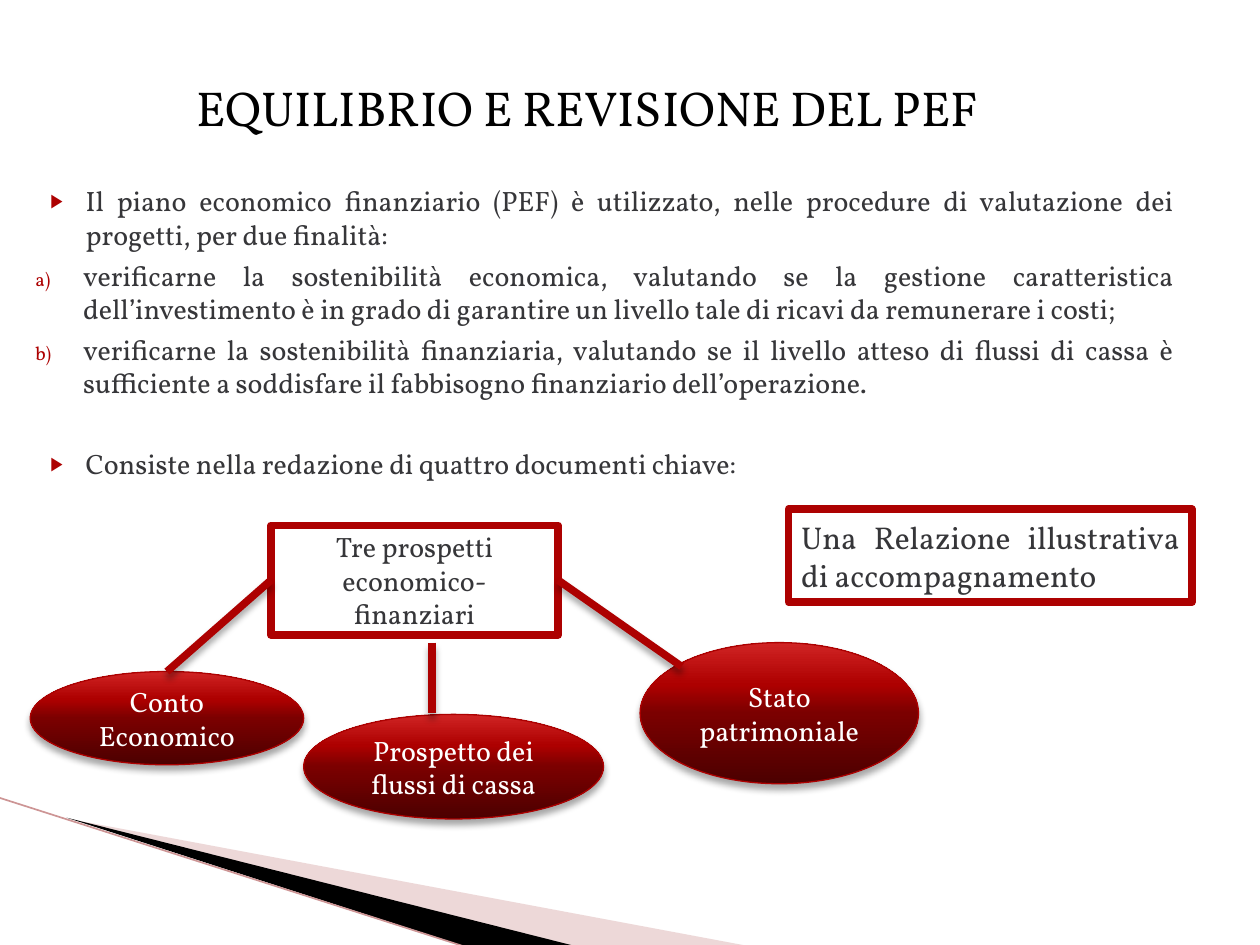
from lxml import etree
from pptx import Presentation
from pptx.dml.color import RGBColor
from pptx.enum import shapes, text
from pptx.oxml import parse_xml
from pptx.oxml.ns import nsdecls, qn
from pptx.util import Inches, Pt

THEME = {
    "font": "Vollkorn",
    "ink": "363639", "black": "000000", "white": "FFFFFF",
    "red": "AD0101", "pink": "D29E9E", "rose": "CD9595",
    "gradient": [(0, "4C0000"), (50, "7B0000"), (70, "AD0000"), (100, "D02424")],
    "title": 28, "body": 16, "note": 18,
    "thick": 4.33, "thin": 0.75,
}

TITLE = "EQUILIBRIO E REVISIONE DEL PEF"
ARROW = '<a:buChar {} char="▶"/>'
LETTER = '<a:buAutoNum {} type="alphaLcParenR"/>'
# text, bullet, left margin, hanging indent, space before in points
BODY = [
    ("Il piano economico finanziario (PEF) è utilizzato, nelle procedure di valutazione dei "
     "progetti, per due finalità:", ARROW, 0.4, 0.28, 0),
    ("verificarne la sostenibilità economica, valutando se la gestione caratteristica "
     "dell’investimento è in grado di garantire un livello tale di ricavi da remunerare i costi;",
     LETTER, 0.38, 0.38, 4),
    ("verificarne la sostenibilità finanziaria, valutando se il livello atteso di flussi di cassa è "
     "sufficiente a soddisfare il fabbisogno finanziario dell’operazione.", LETTER, 0.38, 0.38, 4),
    ("Consiste nella redazione di quattro documenti chiave:", ARROW, 0.4, 0.28, 27),
]
CENTER, JUSTIFY = text.PP_ALIGN.CENTER, text.PP_ALIGN.JUSTIFY
# text, box, alignment, type size
BOXES = [
    ("Tre prospetti economico-finanziari", (2.15, 4.17, 2.28, 0.87), CENTER, "body"),
    ("Una Relazione illustrativa di accompagnamento", (6.26, 4.04, 3.2, 0.74), JUSTIFY, "note"),
]
STATEMENTS = [
    ("Conto Economico", (0.24, 5.33, 2.17, 0.74)),
    ("Stato patrimoniale", (5.08, 5.1, 2.21, 1.12)),
    ("Prospetto dei flussi di cassa", (2.41, 5.67, 2.38, 0.83)),
]
WEDGES = [
    ([(0.55, 6.5), (5.95, 7.51), (4.56, 7.51)], "pink", 40),
    ([(0.53, 6.49), (4.57, 7.51), (3.72, 7.52)], "black", 100),
]


def color(name):
    return RGBColor.from_string(THEME[name])


def format_font(paragraph, size, ink):
    for run in paragraph.runs:
        run.font.name = THEME["font"]
        run.font.size = Pt(THEME[size])
        run.font.color.rgb = color(ink)


def place(shape, box):
    shape.left, shape.top, shape.width, shape.height = map(Inches, box)


def add_shadow(properties):
    effects = properties.find(qn("a:effectLst"))
    if effects is None:
        effects = etree.SubElement(properties, qn("a:effectLst"))
    effects.append(parse_xml(
        f'<a:outerShdw {nsdecls("a")} blurRad="{Pt(4)}" dist="{Pt(3)}" dir="5400000" rotWithShape="0">'
        '<a:srgbClr val="000000"><a:alpha val="35000"/></a:srgbClr></a:outerShdw>'))


def add_label(slide, kind, label, box, alignment, size, ink, line_width):
    shape = slide.shapes.add_shape(kind, *map(Inches, box))
    shape.shadow.inherit = False
    shape.line.color.rgb = color("red")
    shape.line.width = Pt(line_width)
    etree.SubElement(shape.line._get_or_add_ln(), qn("a:round"))
    frame = shape.text_frame
    frame.word_wrap = True
    frame.vertical_anchor = text.MSO_ANCHOR.MIDDLE
    frame.text = label
    frame.paragraphs[0].alignment = alignment
    format_font(frame.paragraphs[0], size, ink)
    return shape


def fill_gradient(shape):
    shape.fill.gradient()
    shape.fill.gradient_angle = 90
    stops = shape._element.spPr.find(".//" + qn("a:gsLst"))
    for stop in list(stops):
        stops.remove(stop)
    for position, value in THEME["gradient"]:
        stops.append(parse_xml(f'<a:gs {nsdecls("a")} pos="{position * 1000}">'
                               f'<a:srgbClr val="{value}"/></a:gs>'))


def add_line(slide, start, end, ink, width):
    line = slide.shapes.add_connector(shapes.MSO_CONNECTOR.STRAIGHT, *map(Inches, start + end))
    line.line.color.rgb = color(ink)
    line.line.width = Pt(width)
    etree.SubElement(line._element.spPr, qn("a:effectLst"))
    return line


def add_wedges(slide):
    for points, ink, opacity in WEDGES:
        corners = [(Inches(x), Inches(y)) for x, y in points]
        builder = slide.shapes.build_freeform(*corners[0])
        builder.add_line_segments(corners[1:], close=True)
        wedge = builder.convert_to_shape()
        wedge.shadow.inherit = False
        wedge.fill.solid()
        wedge.fill.fore_color.rgb = color(ink)
        wedge.line.fill.background()
        if opacity < 100:
            fill = wedge._element.spPr.find(qn("a:solidFill"))
            etree.SubElement(fill[0], qn("a:alpha")).set("val", str(opacity * 1000))
    add_line(slide, (-0.01, 6.33), (3.71, 7.52), "rose", 0.95)


def fill_title(title):
    place(title, (0.35, 0.12, 8.62, 1.45))
    title.text_frame.text = TITLE
    title.text_frame.vertical_anchor = text.MSO_ANCHOR.MIDDLE
    title.text_frame.paragraphs[0].alignment = CENTER
    format_font(title.text_frame.paragraphs[0], "title", "black")


def fill_body(body):
    place(body, (0.18, 1.41, 9.24, 4.29))
    frame = body.text_frame
    frame.auto_size = text.MSO_AUTO_SIZE.NONE
    frame.vertical_anchor = text.MSO_ANCHOR.TOP
    frame.text = "\n".join(item[0] for item in BODY)
    for paragraph, (_, bullet, margin, hanging, space) in zip(frame.paragraphs, BODY):
        properties = paragraph._p.get_or_add_pPr()
        properties.set("marL", str(Inches(margin)))
        properties.set("indent", str(-Inches(hanging)))
        for xml in (f'<a:buClr {{}}><a:srgbClr val="{THEME["red"]}"/></a:buClr>',
                    '<a:buSzPct {} val="68000"/>', bullet):
            properties.append(parse_xml(xml.format(nsdecls("a"))))
        paragraph.alignment = JUSTIFY
        paragraph.space_before = Pt(space)
        format_font(paragraph, "body", "ink")


def add_diagram(slide):
    boxes = []
    for label, box, alignment, size in BOXES:
        shape = add_label(slide, shapes.MSO_SHAPE.RECTANGLE, label, box, alignment, size,
                          "ink", THEME["thick"])
        shape.fill.solid()
        shape.fill.fore_color.rgb = color("white")
        boxes.append(shape)
    ovals = []
    for label, box in STATEMENTS:
        oval = add_label(slide, shapes.MSO_SHAPE.OVAL, label, box, CENTER, "body",
                         "white", THEME["thin"])
        fill_gradient(oval)
        add_shadow(oval._element.spPr)
        ovals.append(oval)

    ends = [((2.15, 4.6), (1.32, 5.33)), ((3.43, 5.1), (3.43, 5.66)), ((4.43, 4.6), (5.41, 5.29))]
    links = [add_line(slide, start, end, "red", THEME["thick"]) for start, end in ends]
    for link in links:
        add_shadow(link._element.spPr)
    links[0].begin_connect(boxes[0], 1)
    links[0].end_connect(ovals[0], 0)
    links[2].begin_connect(boxes[0], 3)


def main():
    presentation = Presentation()
    presentation.slide_width, presentation.slide_height = Inches(10), Inches(7.5)
    slide = presentation.slides.add_slide(presentation.slide_layouts[1])
    add_wedges(slide)
    fill_body(slide.placeholders[1])
    fill_title(slide.shapes.title)
    add_diagram(slide)
    presentation.save("out.pptx")


if __name__ == "__main__":
    main()
